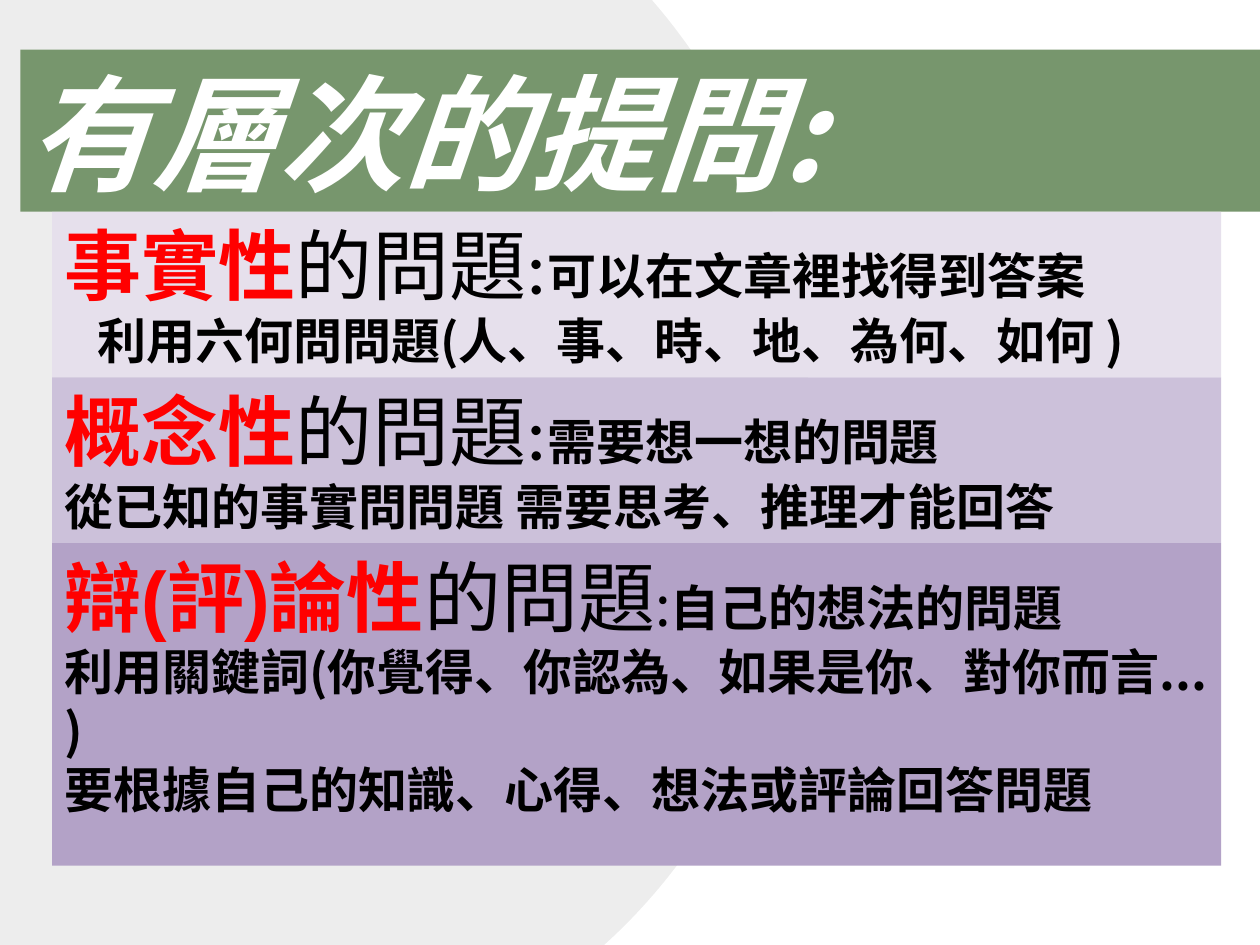
from lxml.etree import SubElement
from pptx import Presentation
from pptx.dml.color import RGBColor
from pptx.enum.shapes import MSO_SHAPE
from pptx.enum.text import MSO_ANCHOR, PP_ALIGN
from pptx.oxml.ns import qn
from pptx.util import Cm, Pt

BLACK = RGBColor(0x00, 0x00, 0x00)
WHITE = RGBColor(0xFF, 0xFF, 0xFF)
RED = RGBColor(0xFF, 0x00, 0x00)
GREEN = RGBColor(0x77, 0x96, 0x6D)
PALE_PURPLE = RGBColor(0xE6, 0xE0, 0xEC)
LIGHT_PURPLE = RGBColor(0xCC, 0xC1, 0xDA)
PURPLE = RGBColor(0xB3, 0xA2, 0xC7)
CJK = "Noto Sans CJK SC"


def add_filled_shape(kind, left, top, width, height, color):
    shape = page.shapes.add_shape(kind, Cm(left), Cm(top), Cm(width), Cm(height))
    shape.shadow.inherit = False
    shape.fill.solid()
    shape.fill.fore_color.rgb = color
    shape.line.fill.background()
    return shape


def add_span(paragraph, text, size, name, color, bold):
    """Add a run whose East Asian characters use the CJK font."""
    span = paragraph.add_run()
    span.text = text
    span.font.size = Pt(size)
    span.font.name = name
    span.font.color.rgb = color
    span.font.bold = bold
    SubElement(span.font._element, qn("a:ea"), typeface=CJK)
    return span


deck = Presentation()
deck.slide_width, deck.slide_height = Cm(25.4), Cm(19.05)
page = deck.slides.add_slide(deck.slide_layouts[6])

circle = add_filled_shape(MSO_SHAPE.OVAL, -4.62, -3.5, 20.98, 25.07, BLACK)
circle_color = circle.fill._xPr.find(qn("a:solidFill"))[0]
SubElement(circle_color, qn("a:alpha"), val="7000")

banner = add_filled_shape(MSO_SHAPE.RECTANGLE, 0.41, 1, 24.99, 3.27, GREEN)
frame = banner.text_frame
frame.word_wrap = True
frame.vertical_anchor = MSO_ANCHOR.MIDDLE
frame.margin_left = frame.margin_right = Cm(0.1)
frame.margin_top = frame.margin_bottom = Cm(0.1)
frame.paragraphs[0].alignment = PP_ALIGN.LEFT
add_span(frame.paragraphs[0], "有層次的提問:", 72, CJK, WHITE, True).font.italic = True

# Each level: height, fill, heading spans, then (first-line indent, text) lines
levels = [
    (3.34, PALE_PURPLE,
     [("事實性", 44, "Calibri", RED, True),
      ("的問題:", 44, "Calibri", BLACK, False),
      ("可以在文章裡找得到答案", 28, CJK, BLACK, True)],
     [(0.67, "利用六何問問題(人、事、時、地、為何、如何 )")]),
    (3.34, LIGHT_PURPLE,
     [("概念性", 44, "Calibri", RED, True),
      ("的問題:", 44, "Calibri", BLACK, False),
      ("需要想一想的問題", 28, CJK, BLACK, True)],
     [(0, "從已知的事實問問題 需要思考、推理才能回答")]),
    (6.5, PURPLE,
     [("辯(評)論性", 44, "Arial", RED, True),
      ("的問題", 44, "Arial", BLACK, False),
      (":", 32, CJK, BLACK, False),
      ("自己的想法的問題", 28, CJK, BLACK, True)],
     [(0, "利用關鍵詞(你覺得、你認為、如果是你、對你而言... )"),
      (0, "要根據自己的知識、心得、想法或評論回答問題")]),
]

top = 4.27
for height, color, heading, lines in levels:
    box = add_filled_shape(MSO_SHAPE.RECTANGLE, 1.05, top, 23.57, height, color)
    top += height
    frame = box.text_frame
    frame.word_wrap = True
    frame.vertical_anchor = MSO_ANCHOR.TOP
    frame.paragraphs[0].alignment = PP_ALIGN.LEFT
    for span_settings in heading:
        add_span(frame.paragraphs[0], *span_settings)
    for indent, text in lines:
        paragraph = frame.add_paragraph()
        paragraph.alignment = PP_ALIGN.LEFT
        paragraph._p.get_or_add_pPr().set("indent", str(Cm(indent)))
        add_span(paragraph, text, 28, CJK, BLACK, True)

deck.save("out.pptx")
